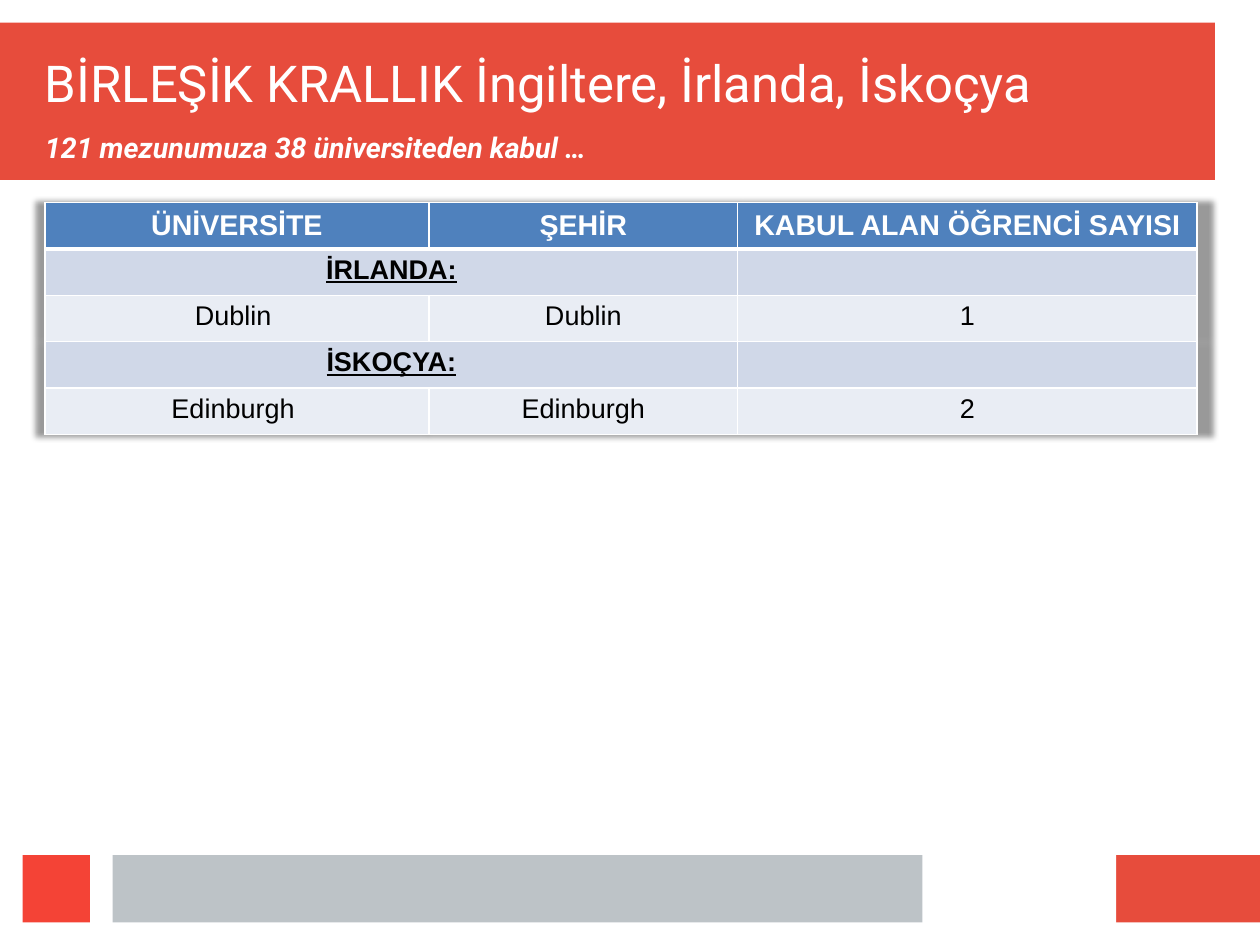
from lxml import etree
from pptx import Presentation
from pptx.dml.color import RGBColor
from pptx.enum import shapes, text
from pptx.oxml import ns
from pptx.util import Pt

TITLE = "BİRLEŞİK KRALLIK İngiltere, İrlanda, İskoçya"
SUBTITLE = "121 mezunumuza 38 üniversiteden kabul …"
HEADER = ["ÜNİVERSİTE", "ŞEHİR", "KABUL ALAN ÖĞRENCİ SAYISI"]
COUNTRIES = {
    "İRLANDA:": [("Dublin ", "Dublin", "1")],
    "İSKOÇYA:": [("Edinburgh ", "Edinburgh", "2")],
}

RED, BRIGHT_RED, GREY, WHITE, BLACK = "E74C3C", "F44336", "BDC3C7", "FFFFFF", "000000"
HEADER_BLUE, COUNTRY_BLUE, SCHOOL_BLUE = "4F81BD", "D0D8E8", "E9EDF4"

SLIDE_W, SLIDE_H = 793.7, 595.3
MARGIN = 28.35
TEXT_W = 737.1
FOOTER_TOP, FOOTER_H = 538.6, 42.5
COLUMN_WIDTHS = [241.8, 194.6, 289.2]
ROW_H = 29.2

# left, top, width, height, fill
BLOCKS = [
    (0, 14.2, 765.4, 99.2, RED),
    (595.3, FOOTER_TOP, SLIDE_W - 595.3, FOOTER_H, RED),
    (70.9, FOOTER_TOP, 510.2, FOOTER_H, GREY),
    (14.2, FOOTER_TOP, FOOTER_H, FOOTER_H, BRIGHT_RED),
    (595.3, 537.2, 107.8, 45.3, WHITE),
]


def color(hex_code):
    return RGBColor.from_string(hex_code)


def add_run(paragraph, words, font, size, hex_code, bold=False, italic=False, underline=False):
    run = paragraph.add_run()
    run.text = words
    run.font.name, run.font.size = font, Pt(size)
    run.font.color.rgb = color(hex_code)
    run.font.bold, run.font.italic, run.font.underline = bold, italic, underline


def add_line_of_text(slide, top, height, anchor, words, size, **style):
    box = slide.shapes.add_textbox(Pt(MARGIN), Pt(top), Pt(TEXT_W), Pt(height))
    frame = box.text_frame
    frame.word_wrap = True
    frame.vertical_anchor = anchor
    frame.margin_left = frame.margin_top = frame.margin_right = frame.margin_bottom = 0
    add_run(frame.paragraphs[0], words, "Roboto", size, WHITE, **style)


def border_cell(cell, bottom_width):
    """Draw white cell borders, before the fill is set."""
    properties = cell._tc.get_or_add_tcPr()
    for side, width in (("L", 1), ("R", 1), ("T", 1), ("B", bottom_width)):
        line = etree.SubElement(properties, ns.qn(f"a:ln{side}"), w=str(Pt(width)))
        fill = etree.SubElement(line, ns.qn("a:solidFill"))
        etree.SubElement(fill, ns.qn("a:srgbClr"), val=WHITE)


def add_table_shadow(table):
    effects = etree.Element(ns.qn("a:effectLst"))
    shadow = etree.SubElement(effects, ns.qn("a:outerShdw"), blurRad=str(Pt(4)), dist=str(Pt(1)),
                              dir="0", sx="102000", sy="101000", algn="ctr", rotWithShape="0")
    shade = etree.SubElement(shadow, ns.qn("a:srgbClr"), val=BLACK)
    etree.SubElement(shade, ns.qn("a:alpha"), val="40000")
    table._tbl.tblPr.insert(0, effects)


def add_admissions(slide):
    rows = [("header", HEADER)]
    for country, schools in COUNTRIES.items():
        rows.append(("country", [country, "", ""]))
        rows += [("school", school) for school in schools]
    looks = {
        "header": (HEADER_BLUE, dict(size=18, hex_code=WHITE, bold=True)),
        "country": (COUNTRY_BLUE, dict(size=17, hex_code=BLACK, bold=True, underline=True)),
        "school": (SCHOOL_BLUE, dict(size=17, hex_code=BLACK)),
    }
    table = slide.shapes.add_table(len(rows), len(HEADER), Pt(MARGIN), Pt(127.6),
                                   Pt(sum(COLUMN_WIDTHS)), Pt(ROW_H * len(rows))).table
    for column, width in zip(table.columns, COLUMN_WIDTHS):
        column.width = Pt(width)
    for r, (kind, values) in enumerate(rows):
        table.rows[r].height = Pt(ROW_H)
        fill, style = looks[kind]
        for c, words in enumerate(values):
            cell = table.cell(r, c)
            border_cell(cell, 3 if kind == "header" else 1)
            cell.fill.solid()
            cell.fill.fore_color.rgb = color(fill)
            if kind == "header":
                cell.vertical_anchor = text.MSO_ANCHOR.MIDDLE
            paragraph = cell.text_frame.paragraphs[0]
            paragraph.alignment = text.PP_ALIGN.CENTER
            if words:
                add_run(paragraph, words, "Arial", **style)
        if kind == "country":
            table.cell(r, 0).merge(table.cell(r, 1))
    add_table_shadow(table)


def main():
    deck = Presentation()
    deck.slide_width, deck.slide_height = Pt(SLIDE_W), Pt(SLIDE_H)
    slide = deck.slides.add_slide(deck.slide_layouts[6])
    for *place, fill in BLOCKS:
        block = slide.shapes.add_shape(shapes.MSO_SHAPE.RECTANGLE, *map(Pt, place))
        block.shadow.inherit = False
        block.fill.solid()
        block.fill.fore_color.rgb = color(fill)
        block.line.fill.background()
    add_line_of_text(slide, 28.35, 42.5, text.MSO_ANCHOR.BOTTOM, TITLE, 32)
    add_admissions(slide)
    add_line_of_text(slide, 82.1, 33.8, text.MSO_ANCHOR.TOP, SUBTITLE, 18, bold=True, italic=True)
    deck.save("out.pptx")


if __name__ == "__main__":
    main()
